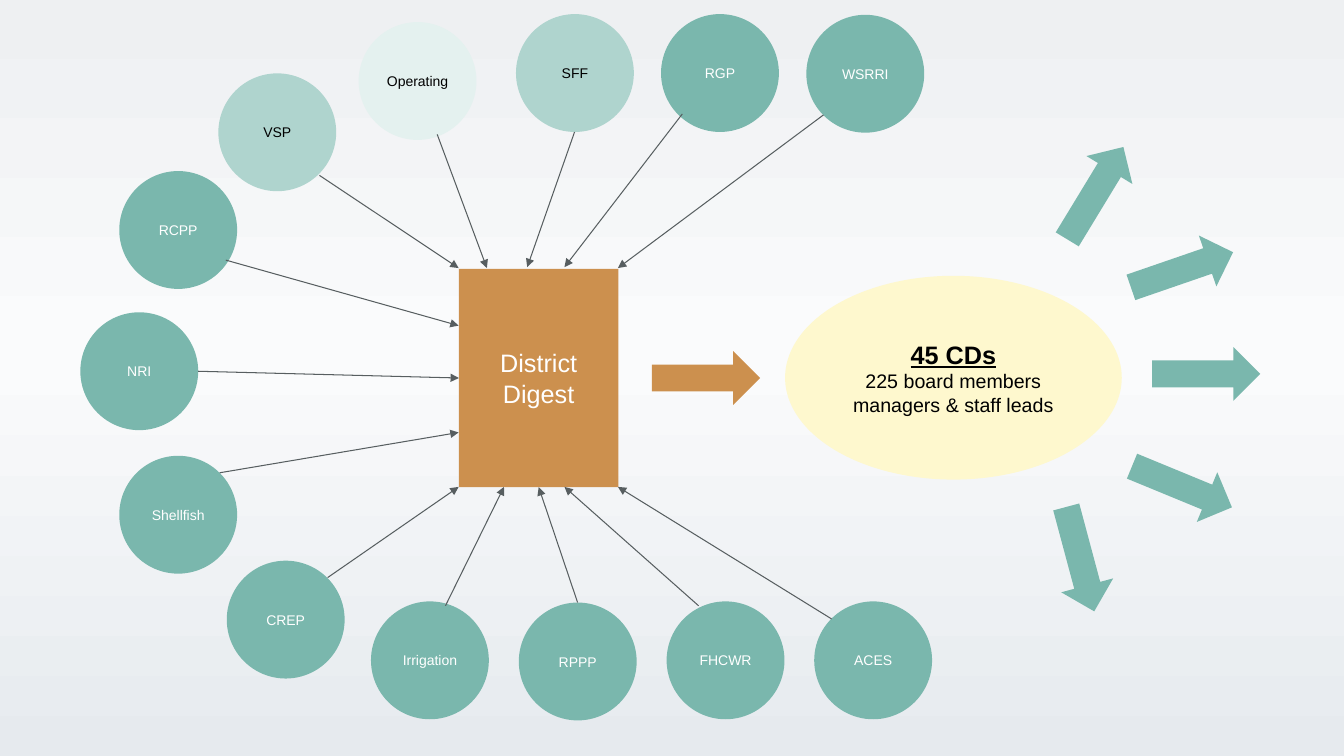
from copy import deepcopy

from lxml import etree
from pptx import Presentation
from pptx import util as u
from pptx.dml.color import RGBColor
from pptx.enum import shapes, text
from pptx.oxml.ns import qn

COLORS = {
    "teal": "7AB7AD", "mist": "AFD4CE", "pale": "E4F1EF",
    "orange": "CC904E", "cream": "FEF8CE", "line": "575E60",
    "white": "FFFFFF", "black": "000000",
}
BACKGROUND = [(0, "E6EAEE"), (0.53, "FAFBFC"), (1, "EEF0F2")]
FONT = "Arial"
CIRCLE = 84.2
ARROW = (77.2, 38.4)

# name, fill, font colour, circle left and top, line start, line end
PROGRAMS = [
    ("WSRRI", "teal", "white", (576, 10.6), (588.2, 82.1), (441.4, 191.5)),
    ("RGP", "teal", "white", (472.2, 10.1), (487.4, 81.4), (403.2, 190.8)),
    ("SFF", "mist", "black", (368.6, 10.1), (410.4, 94.3), (376.6, 190.8)),
    ("Operating", "pale", "black", (256.2, 15.8), (312.3, 96), (347.8, 191.5)),
    ("VSP", "mist", "black", (156, 52.4), (228.2, 125.3), (327.6, 191.5)),
    ("RCPP", "teal", "white", (85.2, 122.2), (161.3, 185.8), (327.6, 232.6)),
    ("NRI", "teal", "white", (57.4, 223.1), (141.6, 265.2), None),
    ("Shellfish", "teal", "white", (85.2, 325.6), (157, 337.7), (327.6, 308.9)),
    ("CREP", "teal", "white", (162, 400.5), (234, 412.6), (327.6, 347.8)),
    ("Irrigation", "teal", "white", (265, 429.6), (318.2, 432.7), (360, 347.8)),
    ("RPPP", "teal", "white", (370.6, 430.4), (412.6, 430.4), None),
    ("FHCWR", "teal", "white", (476.2, 429.6), (499, 432.7), (403.2, 347.8)),
    ("ACES", "teal", "white", (581.6, 429.6), (594, 442.1), (441.4, 347.8)),
]
DIGEST_SIDES = {"NRI": 1, "RPPP": 2}
OUTREACH = [
    (743.8, 118.8, 301.3), (805.7, 173.5, 341), (823, 247.9, 0),
    (805.7, 328.5, 22.4), (733, 380.2, 75),
]


def rgb(name):
    return RGBColor.from_string(COLORS[name])


def paint_background(slide):
    fill = slide.background.fill
    fill.gradient()
    fill.gradient_angle = 90
    first = next(slide.element.iter(qn("a:gs")))
    first.addnext(deepcopy(first))
    for stop, (position, color) in zip(fill.gradient_stops, BACKGROUND):
        stop.position = position
        stop.color.rgb = RGBColor.from_string(color)


def add_shape(slide, kind, left, top, width, height, fill):
    shape = slide.shapes.add_shape(
        kind, u.Pt(left), u.Pt(top), u.Pt(width), u.Pt(height))
    shape.shadow.inherit = False
    shape.fill.solid()
    shape.fill.fore_color.rgb = rgb(fill)
    shape.line.fill.background()
    return shape


def write(shape, lines, sizes, color):
    frame = shape.text_frame
    frame.word_wrap = True
    frame.vertical_anchor = text.MSO_ANCHOR.MIDDLE
    frame.text = "\n".join(lines)
    for para, size in zip(frame.paragraphs, sizes):
        para.alignment = text.PP_ALIGN.CENTER
        font = para.runs[0].font
        font.name = FONT
        font.size = u.Pt(size)
        font.color.rgb = rgb(color)


def add_block_arrow(slide, left, top, fill, rotation=0):
    arrow = add_shape(slide, shapes.MSO_SHAPE.RIGHT_ARROW, left, top, *ARROW, fill)
    arrow.rotation = rotation


def add_line(slide, start, end, digest, side):
    points = [u.Pt(value) for value in (*start, *(end or start))]
    line = slide.shapes.add_connector(shapes.MSO_CONNECTOR.STRAIGHT, *points)
    if side is not None:
        line.end_connect(digest, side)
    line.line.color.rgb = rgb("line")
    line.line.width = u.Pt(0.75)
    etree.SubElement(line.line._get_or_add_ln(), qn("a:tailEnd"), type="triangle")
    etree.SubElement(line.element.spPr, qn("a:effectLst"))


def add_program(slide, digest, name, fill, color, corner, start, end):
    circle = add_shape(slide, shapes.MSO_SHAPE.OVAL, *corner, CIRCLE, CIRCLE, fill)
    write(circle, [name], [10], color)
    add_line(slide, start, end, digest, DIGEST_SIDES.get(name))


def add_districts(slide):
    oval = add_shape(
        slide, shapes.MSO_SHAPE.OVAL, 560.8, 197, 240.5, 145.6, "cream")
    lines = ["45 CDs", "225 board members", "managers & staff leads"]
    write(oval, lines, [18, 14, 14], "black")
    heading = oval.text_frame.paragraphs[0].runs[0].font
    heading.bold = True
    heading.underline = True


def main():
    deck = Presentation()
    deck.slide_width, deck.slide_height = u.Pt(960), u.Pt(540)
    slide = deck.slides.add_slide(deck.slide_layouts[6])
    paint_background(slide)
    digest = add_shape(
        slide, shapes.MSO_SHAPE.RECTANGLE, 327.8, 192, 114, 156, "orange")
    write(digest, ["District Digest"], [18], "white")
    for program in PROGRAMS:
        add_program(slide, digest, *program)
    add_block_arrow(slide, 465.7, 250.8, "orange")
    add_districts(slide)
    for left, top, rotation in OUTREACH:
        add_block_arrow(slide, left, top, "teal", rotation)
    deck.save("out.pptx")


if __name__ == "__main__":
    main()
